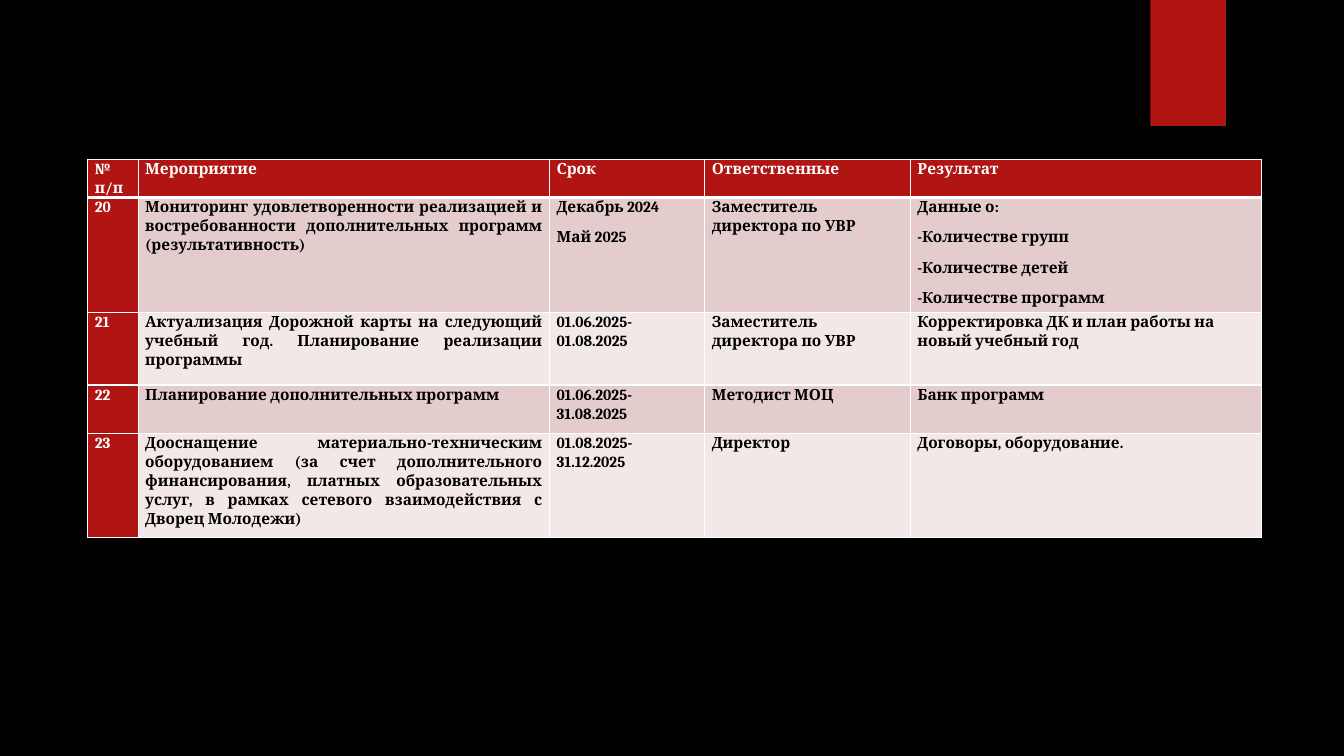
"""Build a slide with the table of planned activities, items 20 to 23."""
from lxml import etree
from pptx import Presentation
from pptx.dml.color import RGBColor
from pptx.enum import shapes, text
from pptx.oxml import ns
from pptx.util import Inches, Pt

THEME = {
    "background": RGBColor.from_string("000000"),
    "accent": RGBColor.from_string("B01513"),
    "bands": [RGBColor.from_string("E4CCCC"), RGBColor.from_string("F2E8E7")],
    "light": RGBColor.from_string("FFFFFF"),
    "dark": RGBColor.from_string("000000"),
    "font": "Cambria",
    "size": Pt(11),
    "border": Pt(1),
    "header_border": Pt(3),
}
COLUMN_WIDTHS = [0.5, 4.08, 1.54, 2.04, 3.48]
ROW_HEIGHTS = [0.38, 1.14, 0.72, 0.48, 1.03]
ACTIVITIES = [
    ["№ п/п", "Мероприятие", "Срок", "Ответственные", "Результат"],
    ["20", "Мониторинг удовлетворенности реализацией и востребованности "
     "дополнительных программ (результативность)",
     "Декабрь 2024\nМай 2025", "Заместитель директора по УВР",
     "Данные о:\n-Количестве групп\n-Количестве детей\n-Количестве программ"],
    ["21", "Актуализация Дорожной карты на следующий учебный год. "
     "Планирование реализации программы",
     "01.06.2025-01.08.2025", "Заместитель директора по УВР",
     "Корректировка ДК и план работы на новый учебный год"],
    ["22", "Планирование дополнительных программ",
     "01.06.2025-31.08.2025", "Методист МОЦ", "Банк программ"],
    ["23", "Дооснащение материально-техническим оборудованием (за счет "
     "дополнительного финансирования, платных образовательных услуг, "
     "в рамках сетевого взаимодействия с Дворец Молодежи)",
     "01.08.2025-31.12.2025", "Директор", "Договоры, оборудование."],
]


def set_attributes(target, values):
    """Set every attribute named in values on the target."""
    for name, value in values.items():
        setattr(target, name, value)


def add_border(cell, side, width):
    """Add a solid light line to one side of the cell."""
    properties = cell._tc.get_or_add_tcPr()
    line = etree.SubElement(properties, ns.qn(f"a:ln{side}"), w=str(int(width)))
    fill = etree.SubElement(line, ns.qn("a:solidFill"))
    etree.SubElement(fill, ns.qn("a:srgbClr"), val=str(THEME["light"]))


presentation = Presentation()
set_attributes(presentation, {"slide_width": Inches(13.33), "slide_height": Inches(7.5)})
slide = presentation.slides.add_slide(presentation.slide_layouts[6])
slide.background.fill.solid()
slide.background.fill.fore_color.rgb = THEME["background"]

ribbon = slide.shapes.add_shape(
    shapes.MSO_SHAPE.RECTANGLE, Inches(11.41), Inches(0), Inches(0.75), Inches(1.25))
ribbon.shadow.inherit = False
ribbon.fill.solid()
ribbon.fill.fore_color.rgb = THEME["accent"]
ribbon.line.fill.background()

table = slide.shapes.add_table(
    len(ROW_HEIGHTS), len(COLUMN_WIDTHS), Inches(0.87), Inches(1.58),
    Inches(sum(COLUMN_WIDTHS)), Inches(sum(ROW_HEIGHTS))).table
set_attributes(table, {"first_row": False, "horz_banding": False})
for column, width in zip(table.columns, COLUMN_WIDTHS):
    column.width = Inches(width)
for row, height in zip(table.rows, ROW_HEIGHTS):
    row.height = Inches(height)

margins = {"margin_left": Inches(0.07), "margin_right": Inches(0.07),
           "margin_top": 0, "margin_bottom": 0}
last_column = len(COLUMN_WIDTHS) - 1
for row_index, activity in enumerate(ACTIVITIES):
    for column_index, wording in enumerate(activity):
        cell = table.cell(row_index, column_index)
        is_heading = row_index == 0 or column_index == 0
        set_attributes(cell, {"text": wording, **margins})
        for side in "LRTB":
            under_header = (row_index, side) in [(0, "B"), (1, "T")]
            add_border(cell, side, THEME["header_border" if under_header else "border"])
        cell.fill.solid()
        band = THEME["bands"][(row_index - 1) % 2]
        cell.fill.fore_color.rgb = THEME["accent"] if is_heading else band
        alignment = (text.PP_ALIGN.LEFT if column_index == last_column
                     else text.PP_ALIGN.JUSTIFY)
        for paragraph in cell.text_frame.paragraphs:
            set_attributes(paragraph, {
                "alignment": alignment, "line_spacing": 1.07, "space_after": Pt(8)})
            for run in paragraph.runs:
                set_attributes(run.font, {
                    "name": THEME["font"], "size": THEME["size"], "bold": True})
                run.font.color.rgb = THEME["light" if is_heading else "dark"]

presentation.save("out.pptx")
